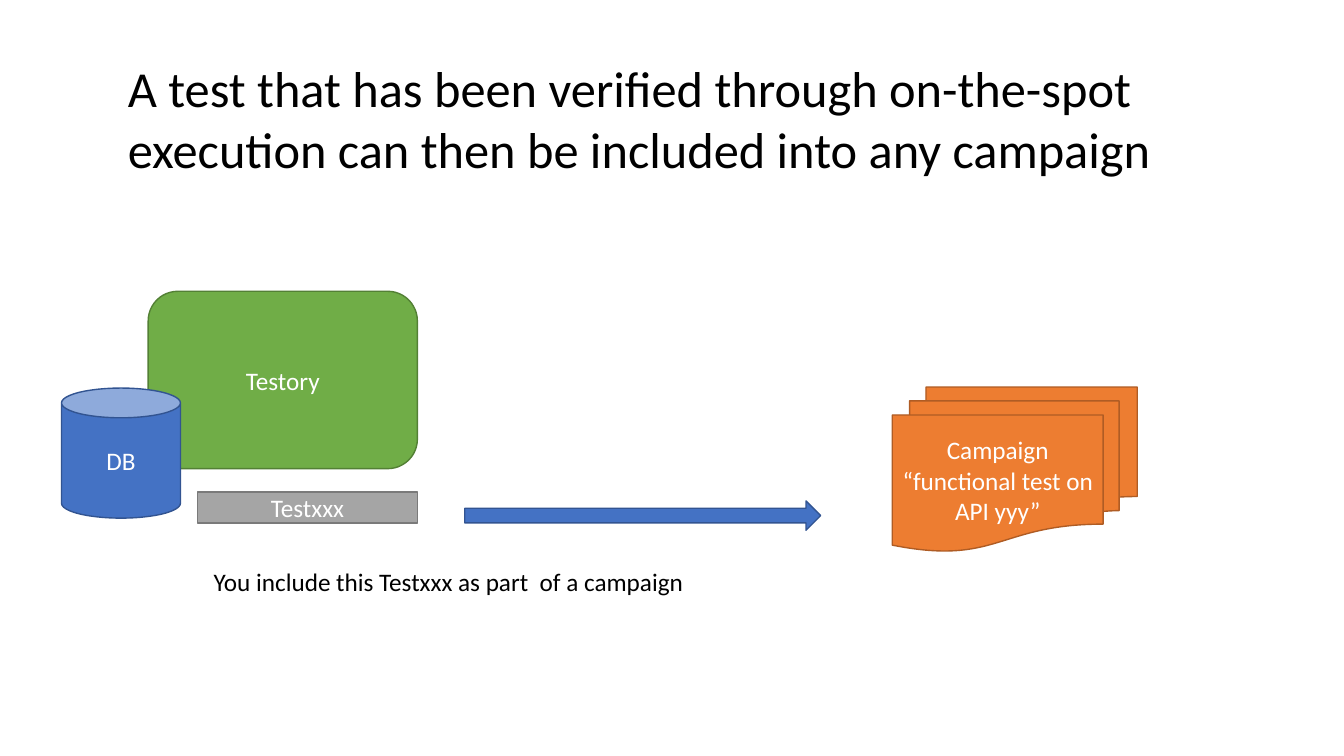
from pptx import Presentation
from pptx import util as u
from pptx.dml import color
from pptx.enum import shapes, text

KIND = shapes.MSO_SHAPE
FONT = "Calibri"


def paint(fmt, tone):
    """Give a fill a solid colour from a hex string."""
    fmt.solid()
    fmt.fore_color.rgb = color.RGBColor.from_string(tone)


def write(frame, words, size, tone, align):
    """Put words in a text frame and format every run."""
    frame.text = words
    for para in frame.paragraphs:
        para.alignment = align
        for run in para.runs:
            run.font.name = FONT
            run.font.size = u.Pt(size)
            paint(run.font.fill, tone)


def block(slide, kind, box, fill, line, words=""):
    """Add a filled preset shape with centred white text."""
    shape = slide.shapes.add_shape(kind, *map(u.Inches, box))
    shape.shadow.inherit = False
    paint(shape.fill, fill)
    paint(shape.line.fill, line)
    shape.line.width = u.Pt(1)
    if words:
        frame = shape.text_frame
        frame.word_wrap = True
        frame.vertical_anchor = text.MSO_ANCHOR.MIDDLE
        write(frame, words, 18, "FFFFFF", text.PP_ALIGN.CENTER)


def label(slide, box, words, size, wrap):
    """Add black left-aligned text that sizes its box."""
    frame = slide.shapes.add_textbox(*map(u.Inches, box)).text_frame
    frame.word_wrap = wrap
    frame.auto_size = text.MSO_AUTO_SIZE.SHAPE_TO_FIT_TEXT
    write(frame, words, size, "000000", text.PP_ALIGN.LEFT)


def main():
    """Build and save the campaign slide."""
    deck = Presentation()
    deck.slide_width = u.Inches(13.33)
    deck.slide_height = u.Inches(7.5)
    slide = deck.slides.add_slide(deck.slide_layouts[6])

    blue = ("4472C4", "325491")
    block(slide, KIND.ROUNDED_RECTANGLE, (1.47, 2.89, 2.67, 1.76),
          "70AD47", "538035", "Testory")
    block(slide, KIND.CAN, (0.61, 3.85, 1.18, 1.29), *blue, "DB")
    block(slide, KIND.RECTANGLE, (1.96, 4.88, 2.18, 0.31),
          "A5A5A5", "7A7A7A", "Testxxx")
    label(slide, (2.02, 5.57, 4.92, 0.4),
          "You include this Testxxx as part  of a campaign", 18, False)
    block(slide, KIND.FLOWCHART_MULTIDOCUMENT, (8.85, 3.84, 2.43, 1.63),
          "ED7D31", "AF5C24", "Campaign\n“functional test on API yyy”")
    block(slide, KIND.RIGHT_ARROW, (4.61, 4.97, 3.53, 0.29), *blue)
    label(slide, (1.17, 0.52, 10.47, 1.31),
          "A test that has been verified through on-the-spot execution "
          "can then be included into any campaign", 36, True)
    deck.save("out.pptx")


if __name__ == "__main__":
    main()
